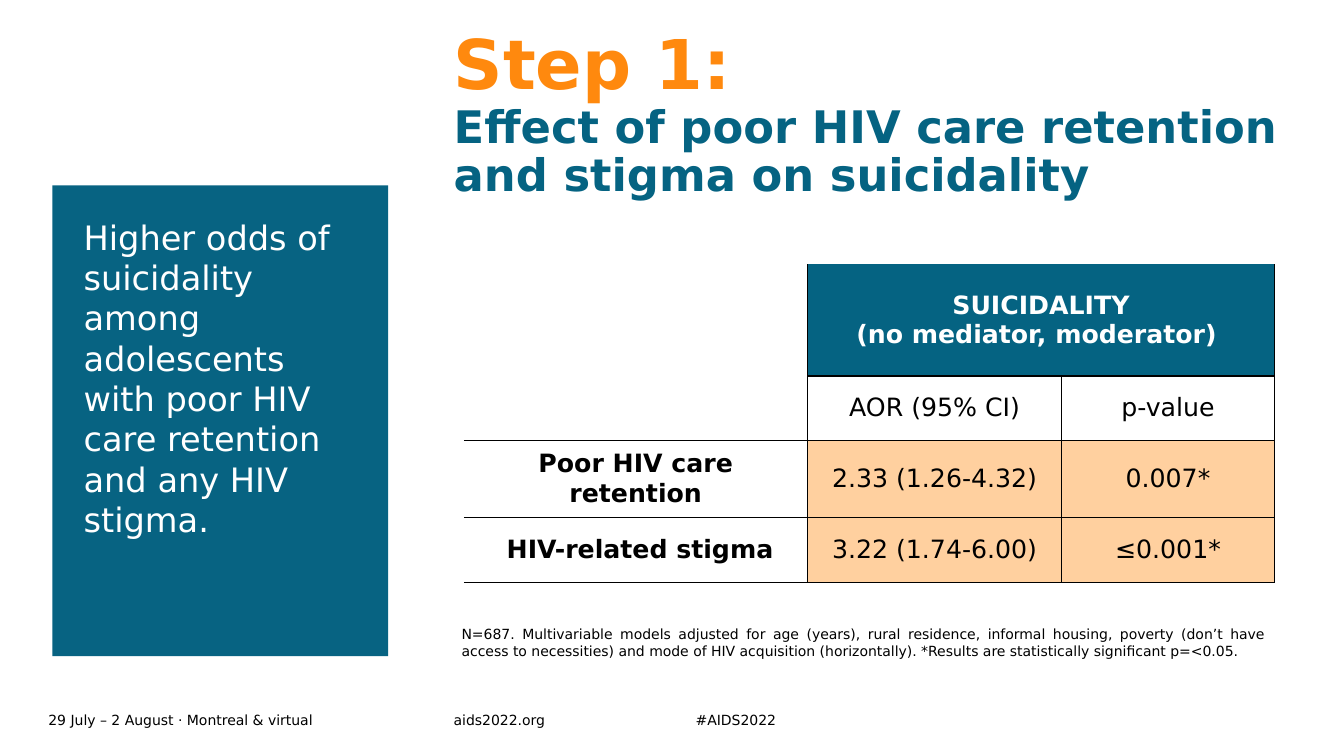
from dataclasses import dataclass

from lxml import etree
from pptx import Presentation
from pptx.dml.color import RGBColor as Rgb
from pptx.enum.shapes import MSO_SHAPE as Shape
from pptx.enum.text import MSO_ANCHOR as Anchor, MSO_AUTO_SIZE as AutoSize, PP_ALIGN as Align
from pptx.oxml.ns import qn
from pptx.util import Inches, Pt


@dataclass(frozen=True)
class Theme:
    font: str = "DejaVu Sans"
    black: str = "000000"
    white: str = "FFFFFF"
    teal: str = "056382"
    panel: str = "076382"
    orange: str = "FF890E"
    peach: str = "FFD09F"
    step: int = 49
    heading: int = 32
    callout: int = 24
    table: int = 18
    small: int = 10


theme = Theme()


def write(para, text, size=theme.small, color=theme.black, bold=False, align=Align.LEFT):
    para.alignment = align
    span = para.add_run()
    span.text = text
    span.font.name = theme.font
    span.font.size = Pt(size)
    span.font.bold = bold
    span.font.color.rgb = Rgb.from_string(color)


def set_margins(item, margin):
    item.margin_left = item.margin_right = Inches(margin)
    item.margin_top = item.margin_bottom = Inches(margin)


deck = Presentation()
deck.slide_width, deck.slide_height = Inches(13.33), Inches(7.5)
page = deck.slides.add_slide(deck.slide_layouts[5])

# Footer
for left, width, text in [
    (0.48, 4.02, "29 July – 2 August · Montreal & virtual"),
    (4.5, 1.93, "aids2022.org"),
    (6.9, 1.93, "#AIDS2022"),
]:
    frame = page.shapes.add_textbox(Inches(left), Inches(7.02), Inches(width), Inches(0.24)).text_frame
    set_margins(frame, 0)
    frame.word_wrap = True
    frame.vertical_anchor = Anchor.MIDDLE
    write(frame.paragraphs[0], text)

# Title
title = page.shapes.title
title.left, title.top = Inches(4.5), Inches(0.3)
title.width, title.height = Inches(8.31), Inches(1.71)
frame = title.text_frame
set_margins(frame, 0)
frame.word_wrap = True
frame.auto_size = AutoSize.NONE
frame.vertical_anchor = Anchor.TOP
para = frame.paragraphs[0]
para.line_spacing = 0.9
write(para, "Step 1:", size=theme.step, color=theme.orange, bold=True)
para.add_line_break()
write(para, "Effect of poor HIV care retention and stigma on suicidality",
      size=theme.heading, color=theme.teal, bold=True)

# Callout panel
panel = page.shapes.add_shape(Shape.RECTANGLE, Inches(0.52), Inches(1.84), Inches(3.33), Inches(4.67))
panel.shadow.inherit = False
panel.fill.solid()
panel.fill.fore_color.rgb = Rgb.from_string(theme.panel)
panel.line.fill.background()
frame = panel.text_frame
set_margins(frame, 0.31)
frame.word_wrap = True
frame.vertical_anchor = Anchor.TOP
write(frame.paragraphs[0],
      "Higher odds of suicidality among adolescents with poor HIV care retention and any HIV stigma.",
      size=theme.callout, color=theme.white)

# Results table: each cell holds its text, fill and ruled sides
columns = [3.41, 2.52, 2.11]
rows = [1.11, 0.64, 0.65, 0.65]
header = "SUICIDALITY\n(no mediator, moderator) "
cells = [
    [("", None, "R"), (header, theme.teal, "LRB"), ("", theme.teal, "LRB")],
    [("", theme.white, "RB"), ("AOR (95% CI)", None, "LRTB"), ("p-value", None, "LRTB")],
    [("Poor HIV care retention", theme.white, "RTB"),
     ("2.33 (1.26-4.32)", theme.peach, "LRTB"), ("0.007*", theme.peach, "LRTB")],
    [(" HIV-related stigma", theme.white, "RTB"),
     ("3.22 (1.74-6.00)", theme.peach, "LRTB"), ("≤0.001*", theme.peach, "LRTB")],
]
table = page.shapes.add_table(len(rows), len(columns), Inches(4.6), Inches(2.62),
                              Inches(sum(columns)), Inches(sum(rows))).table
table.first_row = table.horz_banding = False
for column, width in zip(table.columns, columns):
    column.width = Inches(width)
for row, height in zip(table.rows, rows):
    row.height = Inches(height)
table.cell(0, 1).merge(table.cell(0, 2))

for r, row in enumerate(cells):
    for c, (text, fill, ruled) in enumerate(row):
        cell = table.cell(r, c)
        set_margins(cell, 0.08)
        cell.vertical_anchor = Anchor.MIDDLE
        properties = cell._tc.get_or_add_tcPr()
        for side in "LRTB":
            line = etree.SubElement(properties, qn(f"a:ln{side}"), w=str(Pt(1)))
            if side in ruled:
                paint = etree.SubElement(line, qn("a:solidFill"))
                etree.SubElement(paint, qn("a:srgbClr"), val=theme.black)
            else:
                etree.SubElement(line, qn("a:noFill"))
        if fill:
            cell.fill.solid()
            cell.fill.fore_color.rgb = Rgb.from_string(fill)
        else:
            cell.fill.background()
        if not text:
            continue
        for i, words in enumerate(text.split("\n")):
            para = cell.text_frame.add_paragraph() if i else cell.text_frame.paragraphs[0]
            write(para, words, size=theme.table, align=Align.CENTER,
                  color=theme.white if r == 0 else theme.black, bold=r == 0 or c == 0)

# Table note
frame = page.shapes.add_textbox(Inches(4.48), Inches(6.16), Inches(8.16), Inches(0.44)).text_frame
frame.word_wrap = True
write(frame.paragraphs[0],
      "N=687. Multivariable models adjusted for age (years), rural residence, informal housing, "
      "poverty (don’t have access to necessities) and mode of HIV acquisition (horizontally). "
      "*Results are statistically significant p=<0.05.", align=Align.JUSTIFY)

deck.save("out.pptx")
